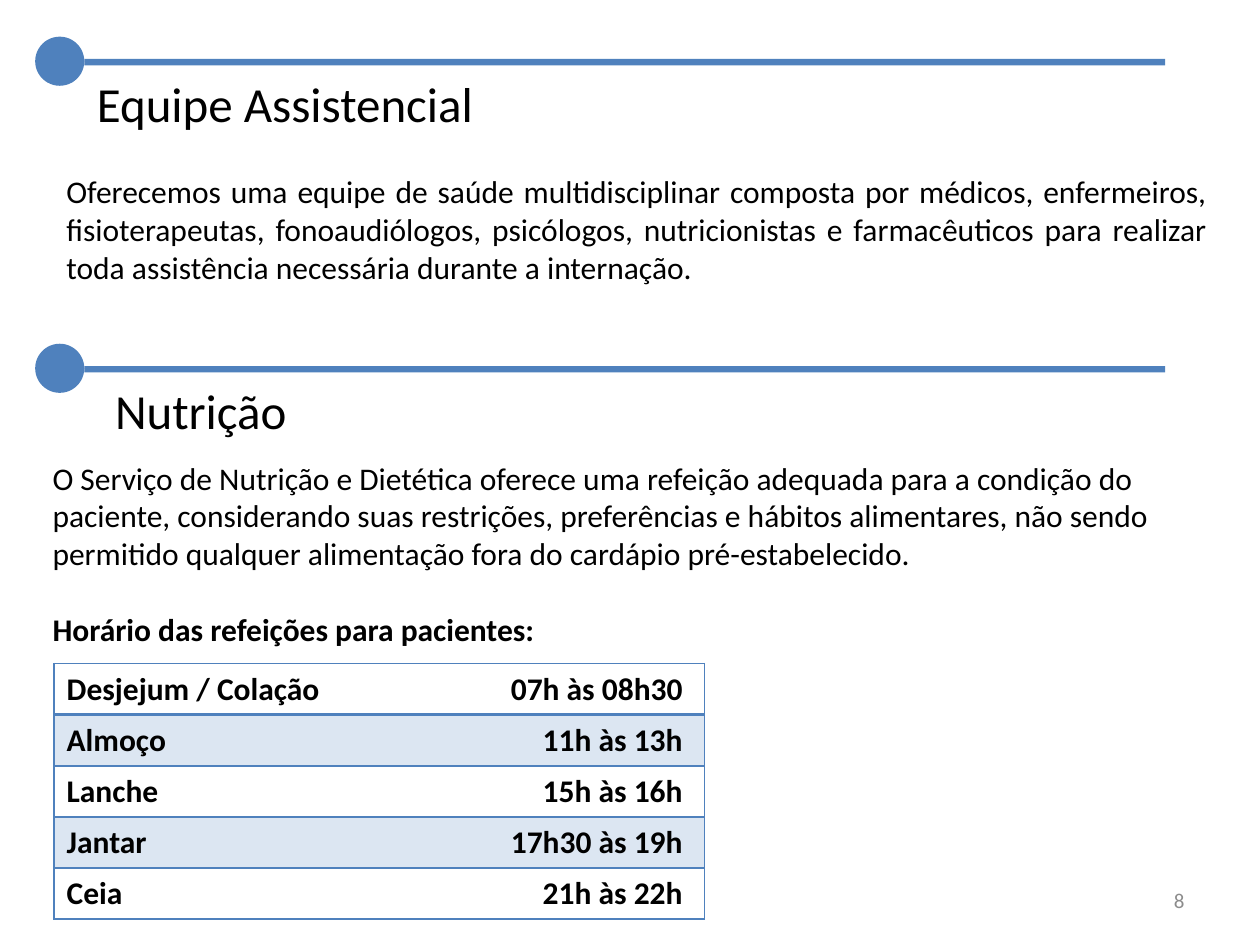
from dataclasses import dataclass

from lxml import etree
from pptx import Presentation
from pptx.dml.color import RGBColor
from pptx.enum.shapes import MSO_SHAPE
from pptx.enum.text import MSO_ANCHOR, MSO_AUTO_SIZE, PP_ALIGN
from pptx.oxml.ns import qn
from pptx.util import Cm, Pt

OVAL, RECTANGLE = MSO_SHAPE.OVAL, MSO_SHAPE.RECTANGLE
TOP, MIDDLE = MSO_ANCHOR.TOP, MSO_ANCHOR.MIDDLE
LEFT, RIGHT, JUSTIFY = PP_ALIGN.LEFT, PP_ALIGN.RIGHT, PP_ALIGN.JUSTIFY
NO_AUTOFIT = MSO_AUTO_SIZE.NONE
TITLE_ONLY = 5


@dataclass(frozen=True)
class Theme:
    font: str = "Calibri"
    accent: str = "4F81BD"
    band: str = "DCE6F2"
    ink: str = "000000"
    muted: str = "8C8C8C"
    heading_size: int = 28
    body_size: int = 18
    number_size: int = 12


class SlideBuilder:
    def __init__(self, slide, theme):
        self.slide = slide
        self.theme = theme

    def shape(self, preset, left, top, width, height):
        shape = self.slide.shapes.add_shape(
            preset, Cm(left), Cm(top), Cm(width), Cm(height))
        shape.shadow.inherit = False
        shape.fill.solid()
        shape.fill.fore_color.rgb = RGBColor.from_string(self.theme.accent)
        shape.line.fill.background()

    def add_text(self, paragraph, text, size, color=None, bold=False,
                 align=LEFT):
        paragraph.alignment = align
        run = paragraph.add_run()
        run.text = text
        run.font.name = self.theme.font
        run.font.size = Pt(size)
        run.font.bold = bold
        run.font.color.rgb = RGBColor.from_string(color or self.theme.ink)

    def frame(self, box, anchor=TOP):
        frame = box.text_frame
        frame.word_wrap = True
        frame.auto_size = NO_AUTOFIT
        frame.vertical_anchor = anchor
        return frame

    def textbox(self, left, top, width, height, anchor=TOP):
        box = self.slide.shapes.add_textbox(
            Cm(left), Cm(top), Cm(width), Cm(height))
        return self.frame(box, anchor)

    def title(self, text, left, top, width, height):
        title = self.slide.shapes.title
        title.left, title.top = Cm(left), Cm(top)
        title.width, title.height = Cm(width), Cm(height)
        self.add_text(self.frame(title).paragraphs[0], text,
                      self.theme.heading_size)

    def section_rule(self, top):
        self.shape(OVAL, 0.71, top, 0.99, 0.99)
        self.shape(RECTANGLE, 1.7, top + 0.45, 21.79, 0.13)

    def borders(self, cell, widths):
        properties = cell._tc.get_or_add_tcPr()
        for side, width in widths.items():
            line = etree.SubElement(
                properties, qn(f"a:ln{side}"), w=str(Pt(width)))
            fill = etree.SubElement(line, qn("a:solidFill"))
            etree.SubElement(fill, qn("a:srgbClr"), val=self.theme.accent)

    def right_tab(self, paragraph, position):
        tabs = etree.SubElement(
            paragraph._p.get_or_add_pPr(), qn("a:tabLst"))
        etree.SubElement(tabs, qn("a:tab"), pos=str(Cm(position)), algn="r")

    def schedule(self, meals, left, top, width, row_height, tab):
        table = self.slide.shapes.add_table(
            len(meals), 1, Cm(left), Cm(top), Cm(width),
            Cm(row_height * len(meals))).table
        table.first_row = table.horz_banding = False
        for index, (meal, hours) in enumerate(meals):
            table.rows[index].height = Cm(row_height)
            cell = table.cell(index, 0)
            self.borders(cell, {"L": 1, "R": 1,
                                "T": 2 if index == 1 else 1,
                                "B": 2 if index == 0 else 1})
            if index % 2:
                cell.fill.solid()
                cell.fill.fore_color.rgb = RGBColor.from_string(
                    self.theme.band)
            else:
                cell.fill.background()
            paragraph = cell.text_frame.paragraphs[0]
            self.add_text(paragraph, f"{meal}\t{hours}",
                          self.theme.body_size, bold=True)
            self.right_tab(paragraph, tab)


def main():
    theme = Theme()
    presentation = Presentation()
    presentation.slide_width, presentation.slide_height = Cm(25.4), Cm(19.05)
    slide = presentation.slides.add_slide(
        presentation.slide_layouts[TITLE_ONLY])
    builder = SlideBuilder(slide, theme)

    for top in (0.74, 6.93):
        builder.section_rule(top)

    builder.title("Equipe Assistencial", 1.7, 1.35, 8.5, 1.45)
    team = builder.textbox(1.09, 3.35, 23.5, 2.6)
    builder.add_text(
        team.paragraphs[0],
        "Oferecemos uma equipe de saúde multidisciplinar composta por "
        "médicos, enfermeiros, fisioterapeutas, fonoaudiólogos, psicólogos, "
        "nutricionistas e farmacêuticos para realizar toda assistência "
        "necessária durante a internação.",
        theme.body_size, align=JUSTIFY)

    nutrition_heading = builder.textbox(2.07, 7.54, 4.24, 1.45)
    builder.add_text(nutrition_heading.paragraphs[0], "Nutrição",
                     theme.heading_size)
    nutrition = builder.textbox(0.81, 9.12, 23.8, 4.2)
    builder.add_text(
        nutrition.paragraphs[0],
        "O Serviço de Nutrição e Dietética oferece uma refeição adequada "
        "para a condição do paciente, considerando suas restrições, "
        "preferências e hábitos alimentares, não sendo permitido qualquer "
        "alimentação fora do cardápio pré-estabelecido.",
        theme.body_size)
    schedule_heading = nutrition.add_paragraph()
    schedule_heading.space_before = Pt(22)
    builder.add_text(schedule_heading, "Horário das refeições para pacientes:",
                     theme.body_size, bold=True)

    meals = [
        ("Desjejum / Colação", "07h às 08h30"),
        ("Almoço", "11h às 13h"),
        ("Lanche", "15h às 16h"),
        ("Jantar", "17h30 às 19h"),
        ("Ceia", "21h às 22h"),
    ]
    builder.schedule(meals, 1.09, 13.38, 13.11, 1.03, 12.42)

    page_number = builder.textbox(18.2, 17.65, 5.93, 1.01, MIDDLE)
    builder.add_text(page_number.paragraphs[0], "8", theme.number_size,
                     theme.muted, align=RIGHT)

    presentation.save("out.pptx")


if __name__ == "__main__":
    main()
